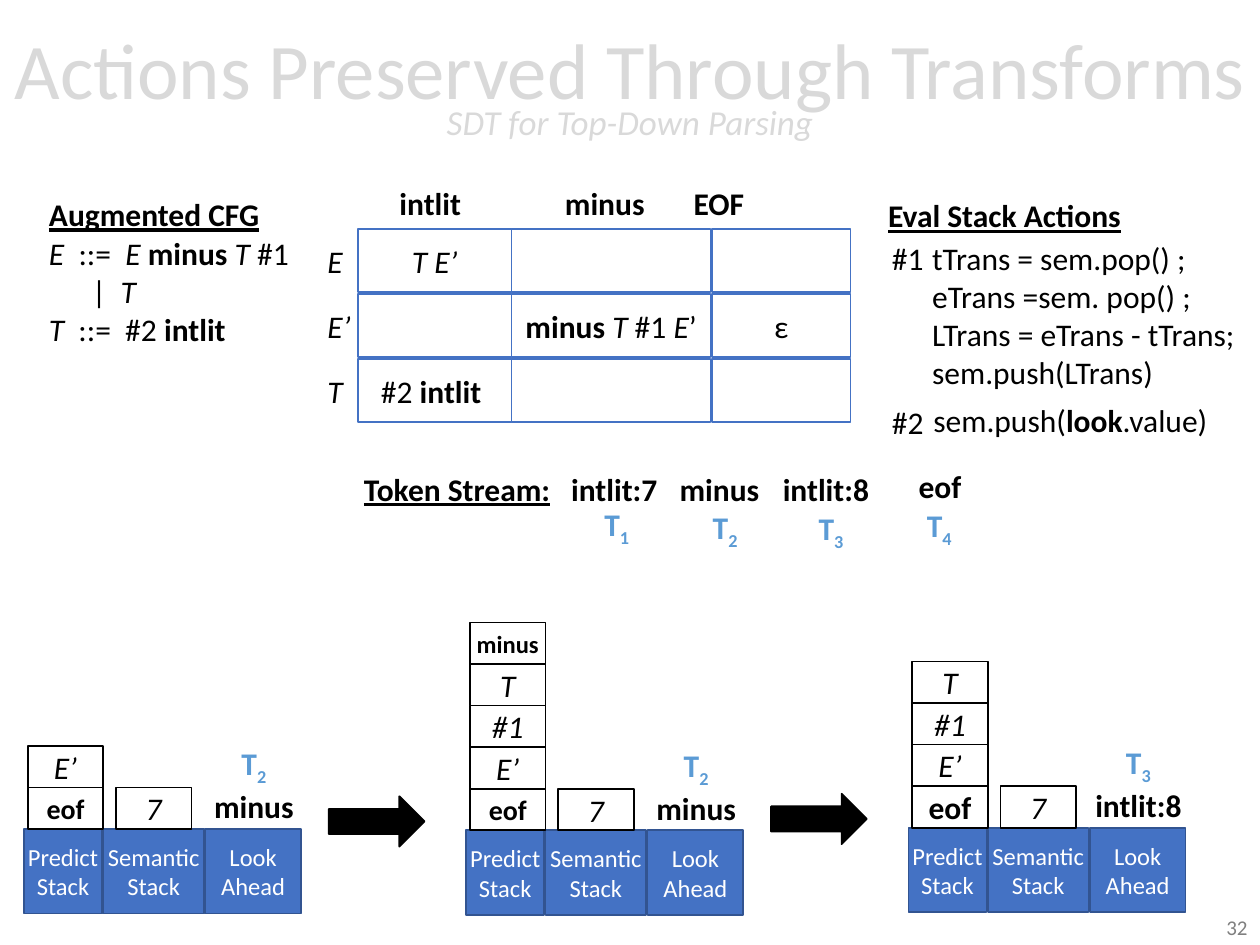
import pptx
import pptx.util
import pptx.dml.color
import pptx.enum.shapes
import pptx.enum.text

Inches, Pt = pptx.util.Inches, pptx.util.Pt
MSO_SHAPE = pptx.enum.shapes.MSO_SHAPE
MSO_ANCHOR = pptx.enum.text.MSO_ANCHOR
PP_ALIGN = pptx.enum.text.PP_ALIGN
rgb = pptx.dml.color.RGBColor.from_string

BLACK, WHITE, BLUE, DARK_BLUE, TOKEN_BLUE = "000000", "FFFFFF", "4472C4", "325491", "5B9BD5"


def write(s, paras, size=18, color=BLACK, align=PP_ALIGN.LEFT):
    """Fill s; each paragraph lists (text, style) runs, style from b, i, u, s (subscript)."""
    tf = s.text_frame
    for n, runs in enumerate(paras):
        p = tf.paragraphs[0] if n == 0 else tf.add_paragraph()
        p.alignment = align
        for text, style in runs:
            r = p.add_run()
            r.text = text
            r.font.name = "Calibri"
            r.font.size = Pt(size)
            r.font.color.rgb = rgb(color)
            r.font.bold = "b" in style
            r.font.italic = "i" in style
            r.font.underline = "u" in style
            if "s" in style:
                r.font._element.set("baseline", "-25000")


def add(x, y, w, h, paras=(), fill=None, line=BLACK, kind=MSO_SHAPE.RECTANGLE,
        size=18, color=BLACK, align=PP_ALIGN.CENTER):
    """Add a filled shape, or a plain text box when fill is None."""
    place = Inches(x), Inches(y), Inches(w), Inches(h)
    if fill is None:
        s = shapes.add_textbox(*place)
        s.text_frame.word_wrap = False
    else:
        s = shapes.add_shape(kind, *place)
        s.shadow.inherit = False
        s.fill.solid()
        s.fill.fore_color.rgb = rgb(fill)
        s.line.color.rgb = rgb(line)
        s.line.width = Pt(1)
        s.text_frame.vertical_anchor = MSO_ANCHOR.MIDDLE
        s.text_frame.margin_left = s.text_frame.margin_right = 0
    write(s, paras, size, color, align)
    return s


prs = pptx.Presentation()
prs.slide_width, prs.slide_height = Inches(10), Inches(7.5)
slide = prs.slides.add_slide(prs.slide_layouts[5])
shapes = slide.shapes

# Title and slide number
title = shapes.title
title.left, title.top, title.width, title.height = Inches(0), Inches(0.02), Inches(10), Inches(1.45)
tf = title.text_frame
tf.text = "Actions Preserved Through Transforms\vSDT for Top-Down Parsing"
tf.auto_size = pptx.enum.text.MSO_AUTO_SIZE.NONE
tf.vertical_anchor = MSO_ANCHOR.MIDDLE
tf.margin_left = tf.margin_right = 0
p = tf.paragraphs[0]
p.alignment = PP_ALIGN.CENTER
p.line_spacing = 0.7
for r, size in zip(p.runs, (45, 20)):
    r.font.name = "Calibri"
    r.font.size = Pt(size)
    r.font.color.rgb = rgb("D9D9D9")
p.runs[1].font.italic = True
add(7.75, 7.21, 2.25, 0.28, [[("32", "")]], size=12, color="808080", align=PP_ALIGN.RIGHT)

# Grammar
add(0.29, 1.5, 1.88, 0.4, [[("Augmented CFG", "bu")]], align=PP_ALIGN.LEFT)
grammar = add(0.29, 1.81, 2.12, 1.01, [
    [("E  ", "i"), ("::=  ", ""), ("E ", "i"), ("minus", "b"), (" T ", "i"), ("#1", "")],
    [("|  ", ""), ("T", "i")],
    [("T", "i"), ("  ::=  #2 ", ""), ("intlit", "b")],
], align=PP_ALIGN.LEFT)
grammar.text_frame.paragraphs[1]._p.get_or_add_pPr().set("marL", str(Inches(0.34)))

# Parse table
for x, w, name in ((3.07, 0.69, "intlit"), (4.38, 0.84, "minus"), (5.4, 0.61, "EOF")):
    add(x, 1.41, w, 0.4, [[(name, "b")]])
columns = ((2.84, 1.22), (4.06, 1.58), (5.65, 1.1))
table = (
    ("E", [("T E’", "i")], [], []),
    ("E’", [], [("minus ", "b"), ("T", "i"), (" #1 ", ""), ("E", "i"), ("’", "")], [("ε", "")]),
    ("T", [("#2 ", ""), ("intlit ", "b")], [], []),
)
for row, (symbol, *cells) in enumerate(table):
    y = 1.82 + 0.515 * row
    add(2.5, y + 0.05, 0.39 if symbol == "E’" else 0.32, 0.4, [[(symbol, "i")]], align=PP_ALIGN.LEFT)
    for (x, w), runs in zip(columns, cells):
        add(x, y, w, 0.5, [runs] if runs else [], WHITE, BLUE)

# Semantic actions
actions = (
    (6.95, 1.51, 2.07, 0.4, [[("Eval Stack Actions", "bu")]]),
    (6.98, 1.85, 0.46, 0.4, [[("#1", "")]]),
    (7.3, 1.85, 2.63, 1.31, [[(code, "")] for code in (
        "tTrans = sem.pop() ;", "eTrans =sem. pop() ;",
        "LTrans = eTrans - tTrans;", "sem.push(LTrans)")]),
    (6.98, 3.15, 0.46, 0.4, [[("#2", "")]]),
    (7.31, 3.13, 2.46, 0.4, [[("sem.push(", ""), ("look", "b"), (".value)", "")]]),
)
for x, y, w, h, paras in actions:
    add(x, y, w, h, paras, align=PP_ALIGN.LEFT)

# Token stream
add(2.79, 3.68, 1.69, 0.4, [[("Token Stream:", "bu")]], align=PP_ALIGN.LEFT)
tokens = (
    ("intlit:7", 4.43, 3.68, 0.89, 4.69, 3.96),
    ("minus", 5.29, 3.68, 0.84, 5.55, 3.98),
    ("intlit:8", 6.11, 3.68, 0.89, 6.39, 3.99),
    ("eof", 7.19, 3.66, 0.54, 7.25, 3.97),
)
for number, (token, x, y, w, label_x, label_y) in enumerate(tokens, 1):
    add(x, y, w, 0.4, [[(token, "b")]])
    add(label_x, label_y, 0.41, 0.4, [[("T", "b"), (str(number), "bs")]], color=TOKEN_BLUE)

# Parser states: predict stack entries run from bottom to top as (text, style, size)
expanded = [("E’", "i", 18), ("#1", "i", 18), ("T", "i", 18)]
states = (
    (6.58, [("eof", "b", 16), ("E’", "i", 18)], "minus", "2"),
    (6.59, [("eof", "b", 16), *expanded, ("minus", "b", 14)], "minus", "2"),
    (6.57, [("eof", "b", 18), *expanded], "intlit:8", "3"),
)
bases = ((0, 0.62, "Predict", "Stack"), (0.63, 0.8, "Semantic", "Stack"), (1.44, 0.76, "Look", "Ahead"))
for n, (y, predict, look, number) in enumerate(states):
    x = 0.19 + 3.51 * n
    for dx, w, *words in bases:
        add(x + dx, y, w, 0.67, [[(word, "")] for word in words], BLUE, DARK_BLUE, size=14, color=WHITE)
    for level, (text, style, size) in enumerate(predict, 1):
        add(x + 0.03, y - 0.33 * level, 0.6, 0.33, [[(text, style)]], WHITE, size=size)
    add(x + 0.73, y - 0.33, 0.6, 0.33, [[("7", "i")]], WHITE)
    add(x + 1.37, y - 0.38, 0.91, 0.4, [[(look, "b")]])
    add(x + 1.62, y - 0.72, 0.41, 0.4, [[("T", "b"), (number, "bs")]], color=TOKEN_BLUE)

for x, y in ((2.61, 6.32), (6.12, 6.3)):
    add(x, y, 0.76, 0.4, fill=BLACK, kind=MSO_SHAPE.RIGHT_ARROW)

prs.save("out.pptx")
